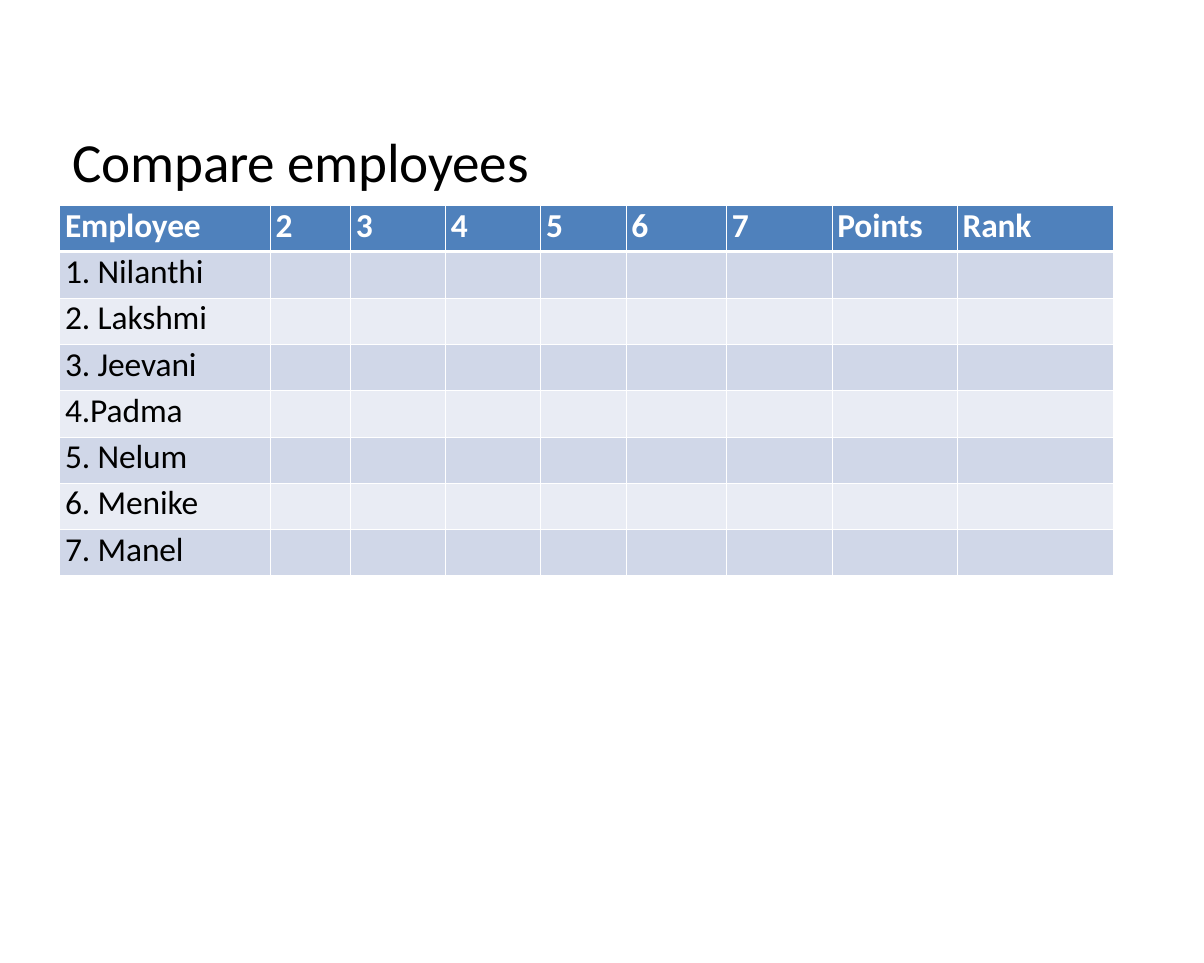
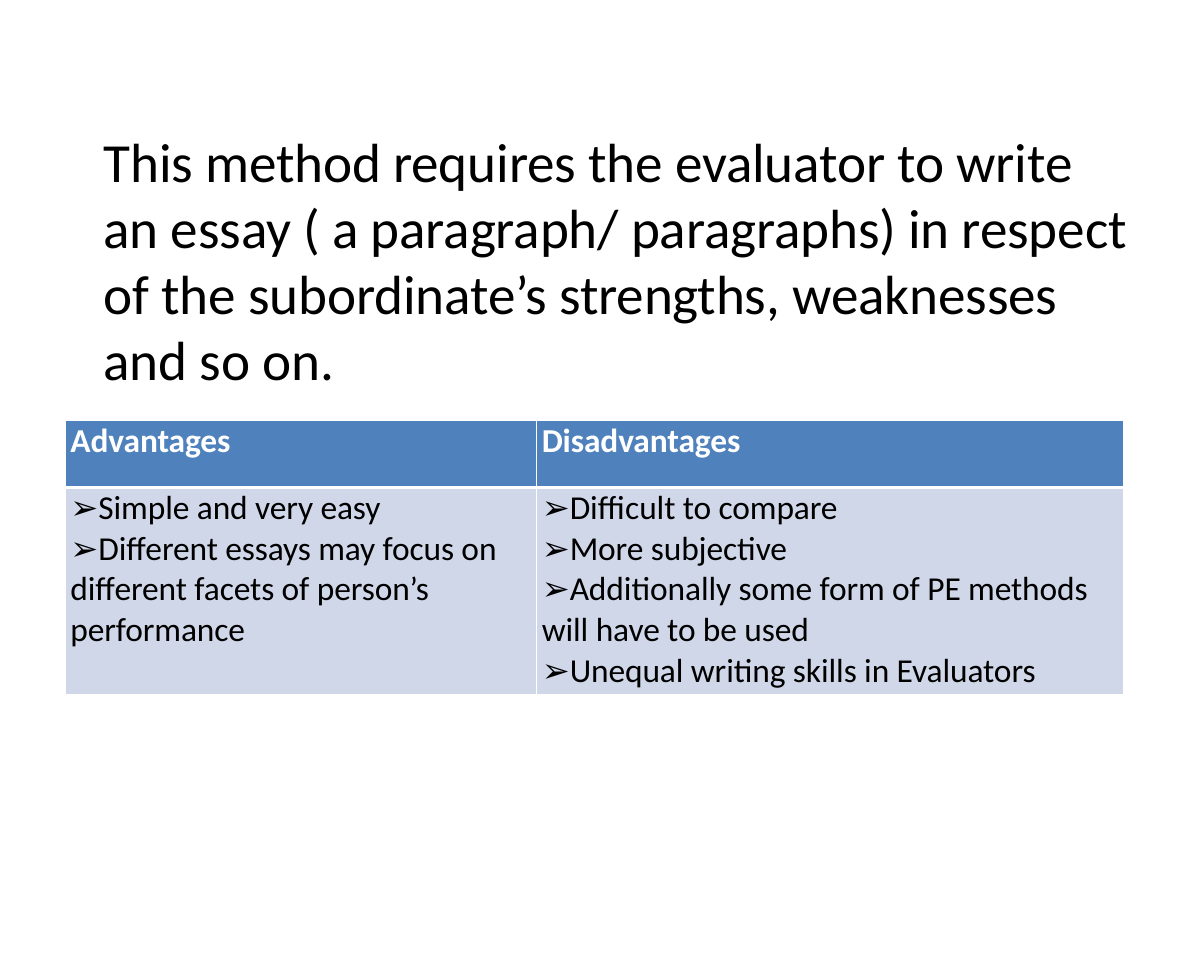
from pptx import Presentation
from pptx.dml.color import RGBColor
from pptx.enum.text import MSO_ANCHOR, MSO_AUTO_SIZE, PP_ALIGN
from pptx.oxml.ns import qn
from pptx.util import Pt
from lxml.etree import SubElement

# Shared style
PX = 9144  # EMU per px, 100 px to the inch
FONT = "Calibri"
BLACK, WHITE = "000000", "FFFFFF"
HEADER_BLUE = "4F81BC"
BANDS = ("D0D7E8", "E9ECF4")
TITLE_BOX = (113, 211, 1773, 446)
TITLE_SIZE, CELL_SIZE = 66, 40
CELL_INDENT = 9
THIN, THICK = 1, 3

# Content
COMPARISON_HEADERS = ["Employee", "2", "3", "4", "5", "6", "7", "Points", "Rank"]
EMPLOYEES = ["1. Nilanthi", "2. Lakshmi", "3. Jeevani", "4.Padma",
             "5. Nelum", "6. Menike", "7. Manel"]
ESSAY_METHOD = ("This method requires the evaluator to write an essay "
                "( a paragraph/ paragraphs) in respect of the subordinate’s "
                "strengths, weaknesses and so on.")
ADVANTAGES = ["Simple and very easy",
              "Different essays may focus on different facets of person’s performance"]
DISADVANTAGES = ["Difficult to compare", "More subjective",
                 "Additionally some form of PE methods will have to be used",
                 "Unequal writing skills in Evaluators"]


def px(length):
    return length * PX


def rgb(hex_colour):
    return RGBColor.from_string(hex_colour)


def format_paragraph(paragraph, size, colour, indent, bold=False, spacing=-10):
    """Left-aligned text; spacing is in hundredths of a point."""
    paragraph.alignment = PP_ALIGN.LEFT
    properties = paragraph._p.get_or_add_pPr()
    properties.set("marL", str(px(indent)))
    properties.set("indent", "0")
    for run in paragraph.runs:
        run.font.name = FONT
        run.font.size = Pt(size)
        run.font.bold = bold
        run.font.color.rgb = rgb(colour)
        run._r.get_or_add_rPr().set("spc", str(spacing))


def add_arrow_bullet(paragraph):
    properties = paragraph._p.get_or_add_pPr()
    SubElement(properties, qn("a:buFont"), typeface="Arial")
    SubElement(properties, qn("a:buChar"), char="➢")


def place_title(layout):
    """Put the title area of the layout where every slide inherits it."""
    title = layout.placeholders[0]
    title.left, title.top, title.width, title.height = map(px, TITLE_BOX)
    frame = title.text_frame
    frame.margin_left = frame.margin_right = frame.margin_top = frame.margin_bottom = 0
    frame.vertical_anchor = MSO_ANCHOR.TOP
    frame.auto_size = MSO_AUTO_SIZE.NONE


def add_titled_slide(deck, layout, title, indent):
    slide = deck.slides.add_slide(layout)
    frame = slide.shapes.title.text_frame
    frame.text = title
    format_paragraph(frame.paragraphs[0], TITLE_SIZE, BLACK, indent, spacing=-20)
    return slide


def set_borders(cell, top, bottom):
    properties = cell._tc.get_or_add_tcPr()
    for side, width in (("L", THIN), ("R", THIN), ("T", top), ("B", bottom)):
        line = SubElement(properties, qn(f"a:ln{side}"), w=str(Pt(width)))
        fill = SubElement(line, qn("a:solidFill"))
        SubElement(fill, qn("a:srgbClr"), val=WHITE)


def fill_cell(cell, lines, row, bulleted):
    header = row == 0
    cell.margin_left = cell.margin_right = cell.margin_top = cell.margin_bottom = 0
    set_borders(cell, THICK if row == 1 else THIN, THICK if header else THIN)
    cell.fill.solid()
    cell.fill.fore_color.rgb = rgb(HEADER_BLUE if header else BANDS[(row - 1) % 2])
    cell.text_frame.text = "\n".join(lines)
    for paragraph in cell.text_frame.paragraphs:
        format_paragraph(paragraph, CELL_SIZE, WHITE if header else BLACK,
                         CELL_INDENT, bold=header)
        if bulleted and not header:
            add_arrow_bullet(paragraph)
        else:
            paragraph.space_before = Pt(0.6)


def add_banded_table(slide, left, top, widths, heights, rows, bulleted=False):
    """Each cell of rows is a list of lines."""
    table = slide.shapes.add_table(len(heights), len(widths), px(left), px(top),
                                   px(sum(widths)), px(sum(heights))).table
    table.horz_banding = False
    for column, width in zip(table.columns, widths):
        column.width = px(width)
    for row, (height, cells) in enumerate(zip(heights, rows)):
        table.rows[row].height = px(height)
        for column, lines in enumerate(cells):
            fill_cell(table.cell(row, column), lines, row, bulleted)


def main():
    deck = Presentation()
    deck.slide_width, deck.slide_height = px(2000), px(1600)
    title_only = deck.slide_layouts[5]
    place_title(title_only)

    # Employee comparison grid
    comparison = add_titled_slide(deck, title_only, "Compare employees", 7)
    blanks = [[] for _ in COMPARISON_HEADERS[1:]]
    grid = [[[header] for header in COMPARISON_HEADERS]]
    grid += [[[employee], *blanks] for employee in EMPLOYEES]
    add_banded_table(comparison, 99, 341,
                     [350, 133, 158, 158, 142, 167, 175, 208, 260],
                     [77] * len(grid), grid)

    # Essay method, for and against
    essay = add_titled_slide(deck, title_only, ESSAY_METHOD, 59)
    add_banded_table(essay, 108, 699, [783, 975], [111, 343],
                     [[["Advantages"], ["Disadvantages"]],
                      [ADVANTAGES, DISADVANTAGES]], bulleted=True)

    deck.save("out.pptx")


if __name__ == "__main__":
    main()
